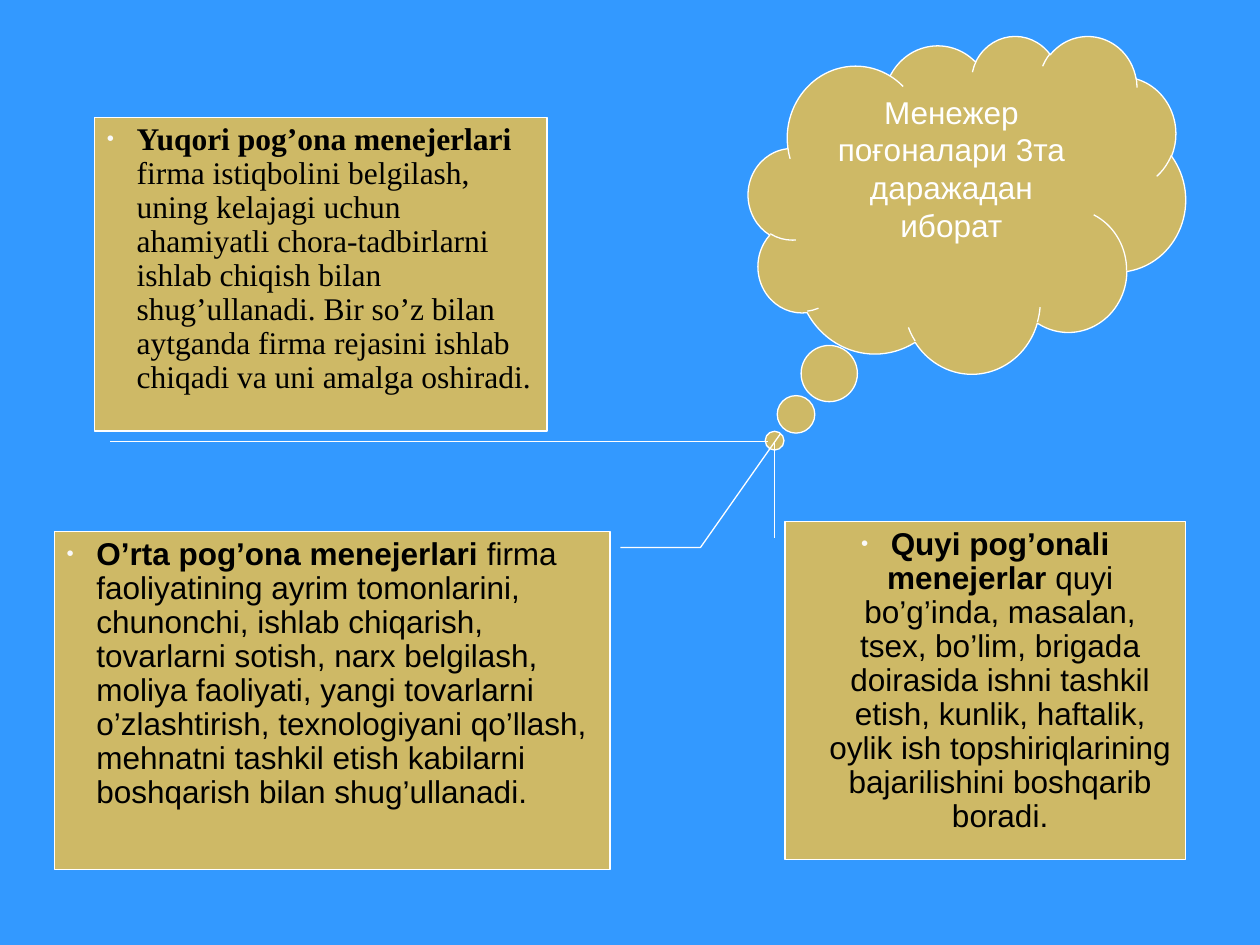
from lxml import etree
from pptx import Presentation
from pptx.dml.color import RGBColor
from pptx.enum.shapes import MSO_SHAPE
from pptx.enum.text import MSO_ANCHOR, PP_ALIGN
from pptx.oxml.ns import qn
from pptx.util import Pt


def color(value):
    return RGBColor.from_string(value)


def add_callout(kind, box, adjustments, font_name, font_color, alignment):
    shape = slide.shapes.add_shape(kind, *[Pt(length) for length in box])
    for index, value in enumerate(adjustments):
        shape.adjustments[index] = value
    shape.shadow.inherit = False
    shape.fill.solid()
    shape.fill.fore_color.rgb = color("CEB966")
    shape.line.color.rgb = color("FFFFFF")
    shape.line.width = Pt(0.75)
    shape.text_frame.word_wrap = True
    shape.text_frame.vertical_anchor = MSO_ANCHOR.TOP
    paragraph = shape.text_frame.paragraphs[0]
    paragraph.alignment = alignment
    paragraph.font.name = font_name
    paragraph.font.size = Pt(18)
    paragraph.font.color.rgb = color(font_color)
    return paragraph


presentation = Presentation()
presentation.slide_width = Pt(720)
presentation.slide_height = Pt(540)
slide = presentation.slides.add_slide(presentation.slide_layouts[6])
slide.background.fill.solid()
slide.background.fill.fore_color.rgb = color("3399FF")

cloud = add_callout(MSO_SHAPE.CLOUD_CALLOUT, (427.7, 20.2, 249.8, 193), (-0.44, 0.7),
                    "Arial", "FFFFFF", PP_ALIGN.CENTER)
cloud.add_run().text = "Менежер поғоналари 3та даражадан иборат"

levels = [
    (MSO_SHAPE.LINE_CALLOUT_1, (54, 67, 258.5, 179.3), (1.033, 0.035, 1.033, 1.489),
     "Times New Roman", PP_ALIGN.LEFT, "Yuqori pog’ona menejerlari",
     " firma istiqbolini belgilash, uning kelajagi uchun ahamiyatli chora-tadbirlarni "
     "ishlab chiqish bilan shug’ullanadi. Bir so’z bilan aytganda firma rejasini ishlab "
     "chiqadi va uni amalga oshiradi."),
    (MSO_SHAPE.LINE_CALLOUT_2, (31, 303.8, 317.5, 193), (0.047, 1.019, 0.047, 1.163, -0.29, 1.307),
     "Arial", PP_ALIGN.LEFT, "O’rta pog’ona menejerlari",
     " firma faoliyatining ayrim tomonlarini, chunonchi, ishlab chiqarish, tovarlarni "
     "sotish, narx belgilash, moliya faoliyati, yangi tovarlarni o’zlashtirish, "
     "texnologiyani qo’llash, mehnatni tashkil etish kabilarni boshqarish bilan shug’ullanadi."),
    (MSO_SHAPE.LINE_CALLOUT_1, (448.5, 298.1, 229, 193), (0.047, -0.026, -0.237, -0.026),
     "Arial", PP_ALIGN.CENTER, "Quyi pog’onali menejerlar",
     " quyi bo’g’inda, masalan, tsex, bo’lim, brigada doirasida ishni tashkil etish, "
     "kunlik, haftalik, oylik ish topshiriqlarining bajarilishini boshqarib boradi."),
]

for kind, box, adjustments, font_name, alignment, title, description in levels:
    paragraph = add_callout(kind, box, adjustments, font_name, "000000", alignment)
    for text, bold in ((title, True), (description, False)):
        run = paragraph.add_run()
        run.text = text
        run.font.bold = bold
    paragraph.line_spacing = 0.9
    properties = paragraph.line_spacing and paragraph._p.get_or_add_pPr()
    properties.set("marL", str(Pt(17)))
    properties.set("indent", str(-Pt(17)))
    bullet_parts = []
    for parent_tag, child_tag, value in (("a:spcBef", "a:spcPct", "20000"),
                                         ("a:buClr", "a:srgbClr", "F9F9F9")):
        parent = etree.Element(qn(parent_tag))
        etree.SubElement(parent, qn(child_tag), val=value)
        bullet_parts.append(parent)
    bullet_parts.append(etree.Element(qn("a:buSzPct"), val="65000"))
    bullet_parts.append(etree.Element(qn("a:buFont"), typeface="Arial"))
    bullet_parts.append(etree.Element(qn("a:buChar"), char="•"))
    position = properties.index(properties.find(qn("a:lnSpc"))) + 1
    properties[position:position] = bullet_parts

presentation.save("out.pptx")
